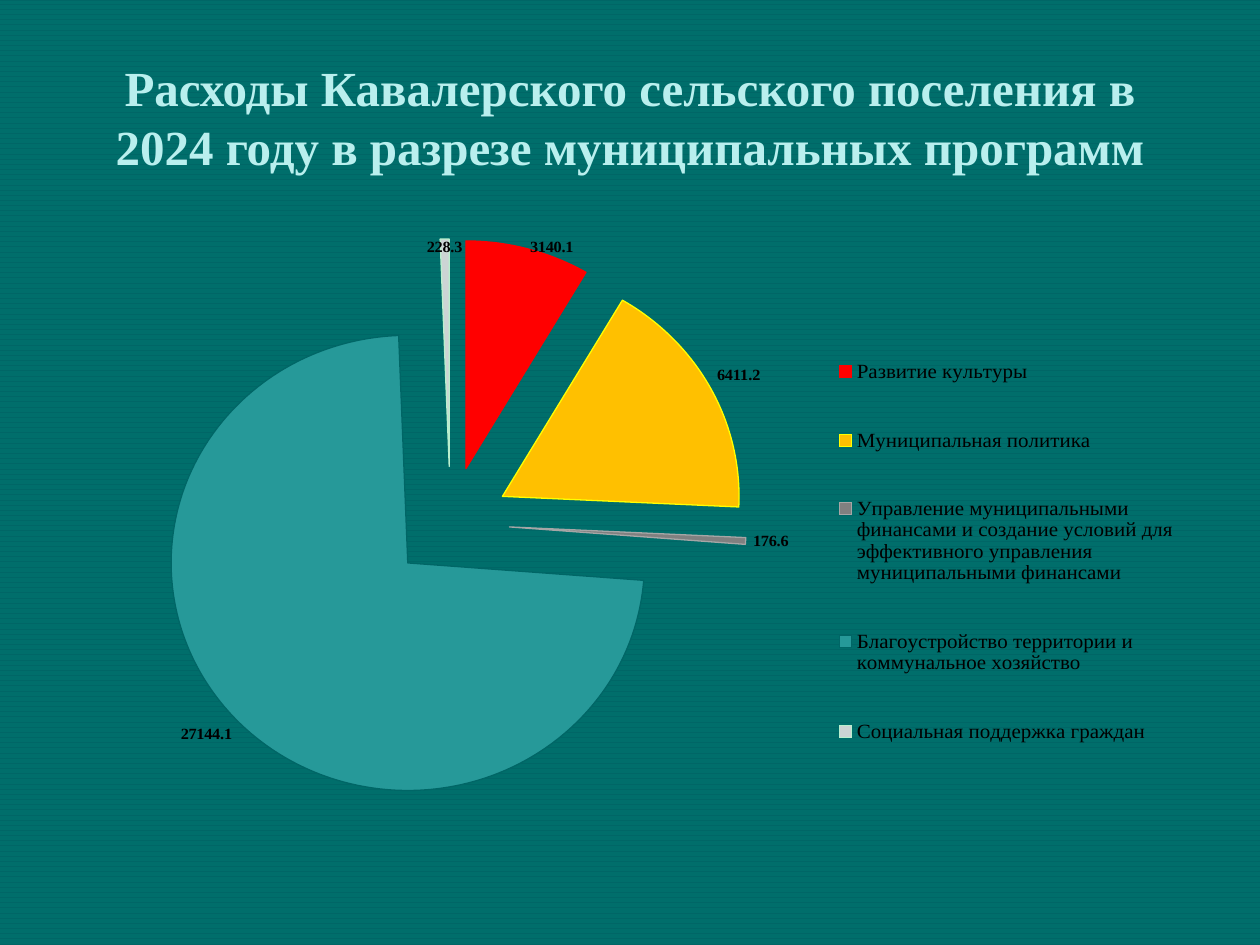
from lxml import etree
from pptx import Presentation
from pptx.chart.data import CategoryChartData
from pptx.dml.color import RGBColor
from pptx.enum.chart import XL_CHART_TYPE as CT, XL_LABEL_POSITION as LP, XL_LEGEND_POSITION as LG
from pptx.enum.dml import MSO_PATTERN
from pptx.enum.text import MSO_ANCHOR, MSO_AUTO_SIZE, PP_ALIGN
from pptx.oxml.ns import qn
from pptx.util import Inches, Pt

FONT = "Times New Roman"
PROGRAMS = [
    ("Развитие культуры", 3140.1, "FF0000", "FF0000"),
    ("Муниципальная политика", 6411.2, "FFC000", "FFFF00"),
    ("Управление муниципальными финансами и создание условий для "
     "эффективного управления муниципальными финансами", 176.6, "808080", "A6A6A6"),
    ("Благоустройство территории и коммунальное хозяйство", 27144.1, "269999", "006666"),
    ("Социальная поддержка граждан", 228.3, "CCD4D4", "B9EFCE"),
]


def rgb(value):
    """Return a colour from a hex string."""
    return RGBColor.from_string(value)


def style_font(font, size, color, bold=False):
    """Set the face, size, colour and weight of a font."""
    font.name, font.size, font.bold = FONT, Pt(size), bold
    font.color.rgb = rgb(color)


def set_background(s):
    """Fill the slide with dark horizontal stripes."""
    fill = s.background.fill
    fill.patterned()
    fill.pattern = MSO_PATTERN.DARK_HORIZONTAL
    fill.fore_color.rgb = rgb("006E6B")
    fill.back_color.rgb = rgb("006666")


def add_title(s, text):
    """Write the slide title into its placeholder."""
    sp = s.shapes.title
    sp.left, sp.top, sp.width, sp.height = (Inches(v) for v in (0.5, 0.3, 9, 1.25))
    tf = sp.text_frame
    tf.word_wrap, tf.auto_size = True, MSO_AUTO_SIZE.NONE
    tf.vertical_anchor = MSO_ANCHOR.MIDDLE
    p = tf.paragraphs[0]
    p.alignment = PP_ALIGN.CENTER
    r = p.add_run()
    r.text = text
    style_font(r.font, 28, "B9EFEE", True)


def set_layout(parent, before, box, inner=False):
    """Place a chart part by fractions of the chart area."""
    for old in parent.findall(qn("c:layout")):
        parent.remove(old)
    layout = etree.Element(qn("c:layout"))
    manual = etree.SubElement(layout, qn("c:manualLayout"))
    items = [("layoutTarget", "inner")] if inner else []
    items += [("xMode", "edge"), ("yMode", "edge"), *zip("xywh", box)]
    for tag, val in items:
        etree.SubElement(manual, qn(f"c:{tag}")).set("val", str(val))
    parent.find(qn(before)).addprevious(layout)


def add_pie(s):
    """Add the exploded pie of spending by programme."""
    data = CategoryChartData(number_format="General")
    data.categories = [name for name, *_ in PROGRAMS]
    data.add_series("Series 1", [value for _, value, *_ in PROGRAMS])
    box = (Inches(v) for v in (0.59, 1.7, 8.91, 5.16))
    chart = s.shapes.add_chart(CT.PIE, *box, data).chart
    chart.has_title = False
    style_font(chart.font, 10, "FFFFFF")

    plot = chart.plots[0]
    plot.vary_by_categories = True
    series = plot.series[0]
    for i, (_, _, color, edge) in enumerate(PROGRAMS):
        fmt = series.points[i].format
        fmt.fill.solid()
        fmt.fill.fore_color.rgb = rgb(color)
        fmt.line.color.rgb = rgb(edge)
        fmt.line.width = Pt(0.75)
    explosion = etree.Element(qn("c:explosion"))
    explosion.set("val", "25")
    series._element.find(qn("c:dPt")).addprevious(explosion)

    labels = series.data_labels
    labels.show_value = True
    labels.position = LP.OUTSIDE_END
    style_font(labels.font, 9.3, "000000", True)

    chart.has_legend = True
    legend = chart.legend
    legend.position, legend.include_in_layout = LG.RIGHT, False
    style_font(legend.font, 12, "000000")
    set_layout(legend._element, "c:overlay", (0.67, 0.12, 0.32, 0.76))
    plot_area = chart._chartSpace.chart.plotArea
    set_layout(plot_area, "c:pieChart", (0.03, 0, 0.61, 0.91), True)


def main():
    """Build and save the slide."""
    prs = Presentation()
    prs.slide_width, prs.slide_height = Inches(10), Inches(7.5)
    s = prs.slides.add_slide(prs.slide_layouts[5])
    set_background(s)
    add_pie(s)
    add_title(s, "Расходы Кавалерского сельского поселения в 2024 году "
                 "в разрезе муниципальных программ")
    prs.save("out.pptx")


if __name__ == "__main__":
    main()
